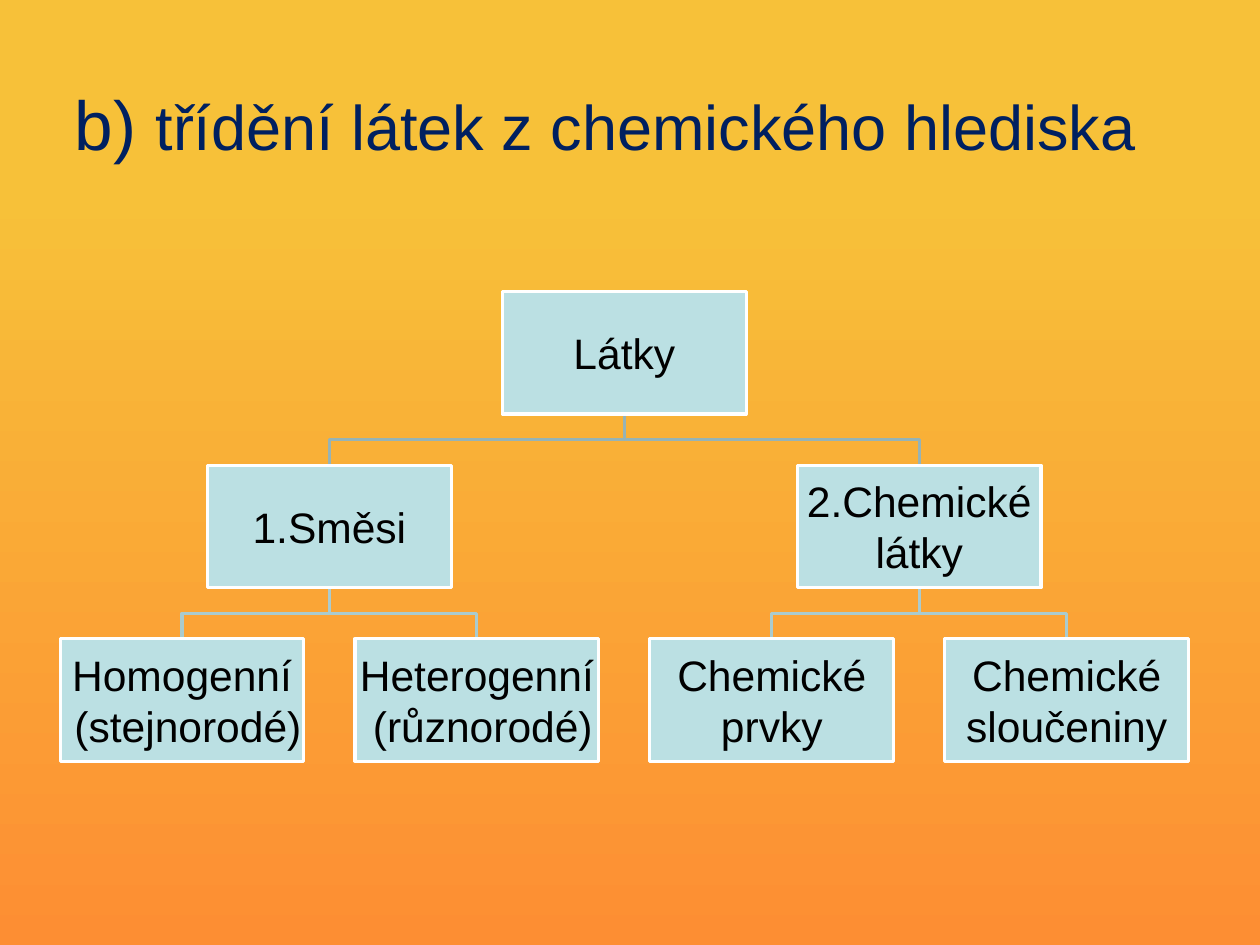
from pptx import Presentation
from pptx import util as u
from pptx.dml.color import RGBColor
from pptx.enum import shapes, text


def rgb(value):
    return RGBColor.from_string(value)


def style(r, size, color):
    for name, value in {"name": "Arial", "size": u.Pt(size)}.items():
        setattr(r.font, name, value)
    r.font.color.rgb = rgb(color)


prs = Presentation()
prs.slide_width, prs.slide_height = u.Inches(11.11), u.Inches(8.33)
s = prs.slides.add_slide(prs.slide_layouts[6])

# Background gradient, top to bottom
fill = s.background.fill
fill.gradient()
fill.gradient_angle = 270
for stop, (pos, color) in zip(fill.gradient_stops, [(0.2, "F7C139"), (1, "FD8E33")]):
    stop.position = pos
    stop.color.rgb = rgb(color)

# Title
sp = s.shapes.add_textbox(u.Inches(0.56), u.Inches(0.39), u.Inches(10), u.Inches(1.39))
tf = sp.text_frame
tf.word_wrap = True
tf.vertical_anchor = text.MSO_ANCHOR.MIDDLE
for words, size in [("b) ", 44), ("třídění látek z chemického hlediska", 40)]:
    r = tf.paragraphs[0].add_run()
    r.text = words
    style(r, size, "002060")

# Tree: label, half-column, row, parent index
nodes = [
    ("Látky", 3, 0, None),
    ("1.Směsi", 1, 1, 0),
    ("2.Chemické látky", 5, 1, 0),
    ("Homogenní\n (stejnorodé)", 0, 2, 1),
    ("Heterogenní\n (různorodé)", 2, 2, 1),
    ("Chemické prvky", 4, 2, 2),
    ("Chemické sloučeniny", 6, 2, 2),
]
box_w, box_h = u.Inches(2.15), u.Inches(1.08)
lefts = [u.Inches(0.53 + 1.3 * col) for _, col, _, _ in nodes]
tops = [u.Inches(2.57 + 1.53 * row) for _, _, row, _ in nodes]
branch_colors = {1: "96B3B6", 2: "AACBCE"}

# Branches, behind the boxes
for (_, _, row, parent), left, top in zip(nodes, lefts, tops):
    if parent is None:
        continue
    start_x, end_x = lefts[parent] + box_w // 2, left + box_w // 2
    start_y = tops[parent] + box_h
    mid_y = (start_y + top) // 2
    branch = s.shapes.build_freeform(start_x, start_y)
    branch.add_line_segments([(start_x, mid_y), (end_x, mid_y), (end_x, top)], close=False)
    sp = branch.convert_to_shape()
    sp.shadow.inherit = False
    sp.fill.background()
    sp.line.color.rgb = rgb(branch_colors[row])
    sp.line.width = u.Pt(2)

# Boxes
for (label, _, _, _), left, top in zip(nodes, lefts, tops):
    sp = s.shapes.add_shape(shapes.MSO_SHAPE.RECTANGLE, left, top, box_w, box_h)
    sp.shadow.inherit = False
    sp.fill.solid()
    sp.fill.fore_color.rgb = rgb("BBE0E3")
    sp.line.color.rgb = rgb("FFFFFF")
    sp.line.width = u.Pt(2)
    tf = sp.text_frame
    tf.word_wrap = True
    tf.vertical_anchor = text.MSO_ANCHOR.MIDDLE
    for side in ("left", "right", "top", "bottom"):
        setattr(tf, f"margin_{side}", u.Inches(0.02))
    tf.text = label
    for p in tf.paragraphs:
        p.alignment = text.PP_ALIGN.CENTER
        style(p.runs[0], 27, "000000")

prs.save("out.pptx")
